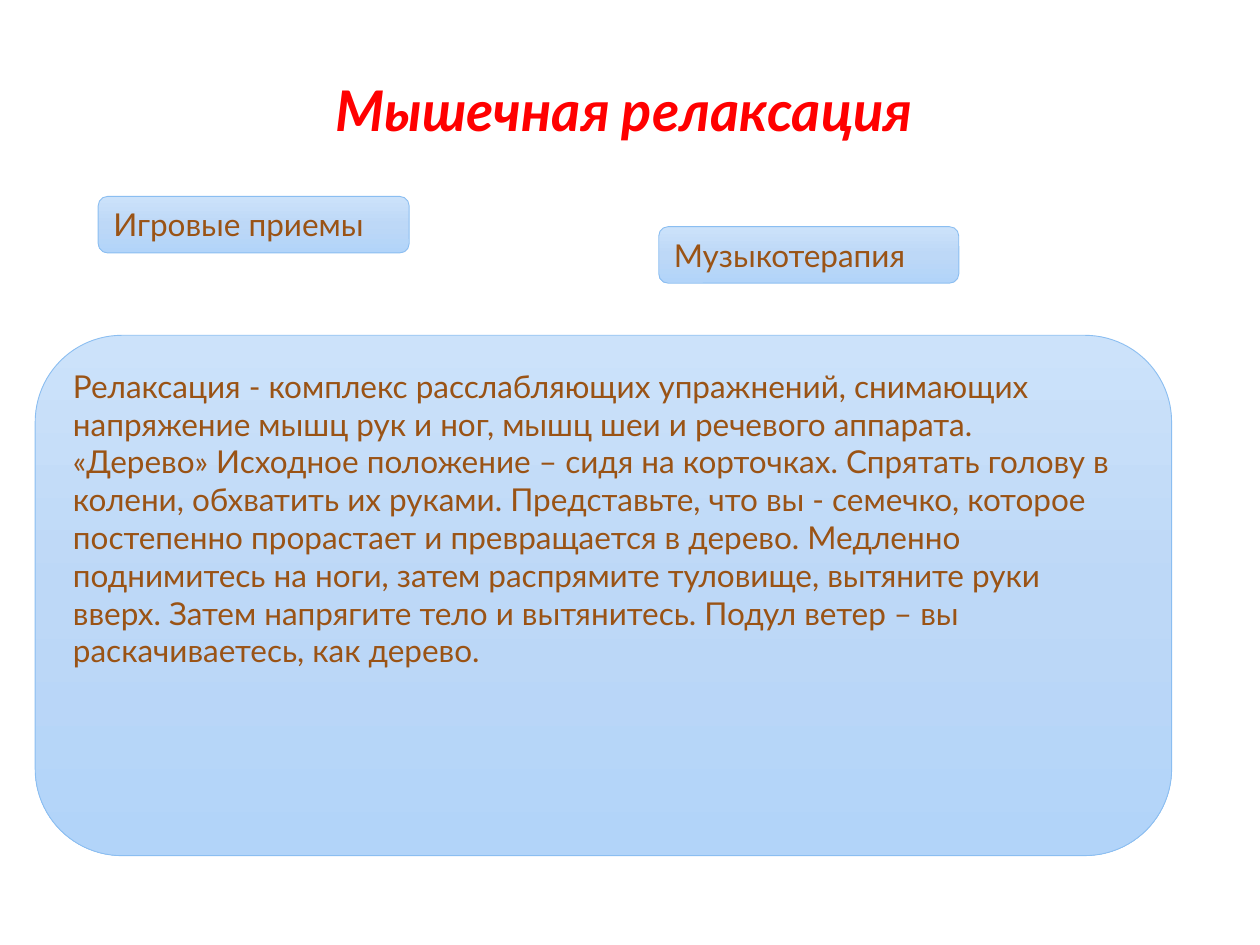
from copy import deepcopy
from dataclasses import dataclass

from pptx import Presentation
from pptx import util as u
from pptx.dml.color import RGBColor
from pptx.enum import shapes, text
from pptx.oxml.ns import qn


@dataclass(frozen=True)
class Theme:
    font: str = "Lato"
    title_color: str = "FF0000"
    text_color: str = "9A5315"
    line_color: str = "8BBEF1"
    gradient: tuple = ("CCE2FA", "BDD8F7", "B2D4F9")
    title_size: int = 32
    text_size: int = 18
    line_width: float = 0.5


THEME = Theme()

TITLE = "Мышечная релаксация"
METHODS = [
    ("Музыкотерапия", (13.28, 4.57, 6.05, 1.14)),
    ("Игровые приемы", (1.98, 3.96, 6.27, 1.14)),
]
EXERCISE = [
    "Релаксация - комплекс расслабляющих упражнений, снимающих напряжение "
    "мышц рук и ног, мышц шеи и речевого аппарата.",
    "«Дерево» Исходное положение – сидя на корточках. Спрятать голову в "
    "колени, обхватить их руками. Представьте, что вы - семечко, которое "
    "постепенно прорастает и превращается в дерево. Медленно поднимитесь на "
    "ноги, затем распрямите туловище, вытяните руки вверх. Затем напрягите "
    "тело и вытянитесь. Подул ветер – вы раскачиваетесь, как дерево.",
]


def add_span(para, words, size, color):
    span = para.add_run()
    span.text = words
    span.font.name = THEME.font
    span.font.size = u.Pt(size)
    span.font.color.rgb = RGBColor.from_string(color)
    return span


def fill_gradient(shape):
    """Shade the shape from top to bottom with evenly spaced theme colours."""
    shape.fill.gradient()
    shape.fill.gradient_angle = 270
    stop_list = shape._element.spPr.find(qn("a:gradFill")).find(qn("a:gsLst"))
    stop_list.insert(1, deepcopy(stop_list[0]))
    last = len(THEME.gradient) - 1
    for index, stop in enumerate(shape.fill.gradient_stops):
        stop.position = index / last
        stop.color.rgb = RGBColor.from_string(THEME.gradient[index])


def place_title(page, box):
    title = page.shapes.title
    title.left, title.top, title.width, title.height = map(u.Cm, box)
    frame = title.text_frame
    frame.auto_size = text.MSO_AUTO_SIZE.NONE
    frame.vertical_anchor = text.MSO_ANCHOR.BOTTOM
    para = frame.paragraphs[0]
    para.alignment = text.PP_ALIGN.CENTER
    para.line_spacing = 0.9
    span = add_span(para, TITLE, THEME.title_size, THEME.title_color)
    span.font.bold = span.font.italic = True


def add_card(page, box, paragraphs):
    """Add a rounded gradient panel holding left-aligned paragraphs."""
    card = page.shapes.add_shape(
        shapes.MSO_SHAPE.ROUNDED_RECTANGLE, *map(u.Cm, box))
    card.shadow.inherit = False
    fill_gradient(card)
    card.line.color.rgb = RGBColor.from_string(THEME.line_color)
    card.line.width = u.Pt(THEME.line_width)
    frame = card.text_frame
    frame.word_wrap = True
    frame.vertical_anchor = text.MSO_ANCHOR.TOP
    for index, words in enumerate(paragraphs):
        para = frame.add_paragraph() if index else frame.paragraphs[0]
        para.alignment = text.PP_ALIGN.LEFT
        add_span(para, words, THEME.text_size, THEME.text_color)


def main():
    deck = Presentation()
    deck.slide_width, deck.slide_height = u.Cm(25.4), u.Cm(19.05)
    page = deck.slides.add_slide(deck.slide_layouts.get_by_name("Title Only"))
    place_title(page, (2.11, 1.12, 20.96, 1.9))
    add_card(page, (0.71, 6.76, 22.91, 10.49), EXERCISE)
    for name, box in METHODS:
        add_card(page, box, [name])
    deck.save("out.pptx")


if __name__ == "__main__":
    main()
